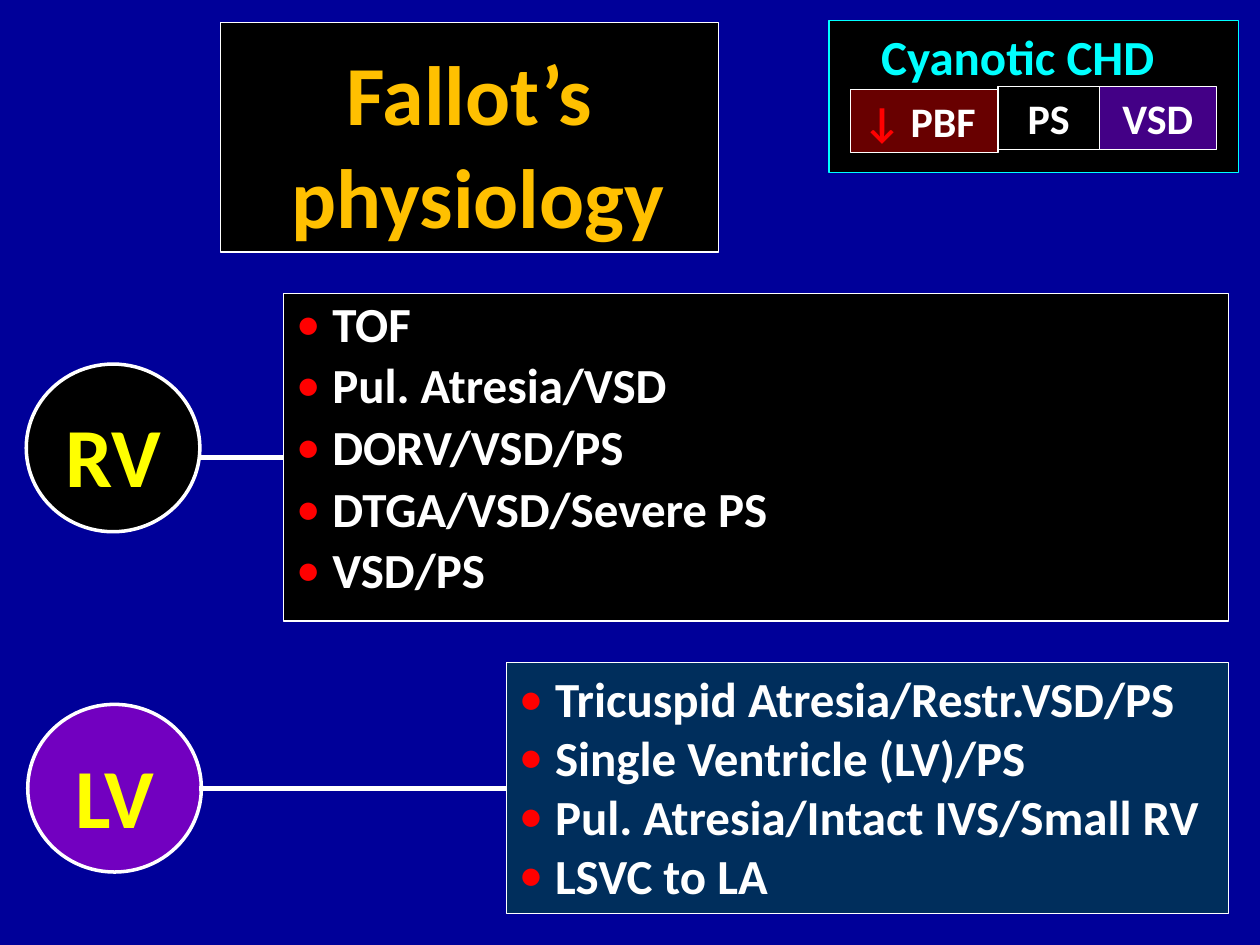
from dataclasses import dataclass

from lxml import etree
from pptx import Presentation
from pptx.dml.color import RGBColor
from pptx.enum.shapes import MSO_CONNECTOR, MSO_SHAPE
from pptx.enum.text import MSO_ANCHOR, MSO_AUTO_SIZE, PP_ALIGN
from pptx.oxml.ns import qn
from pptx.util import Cm, Pt

RECT, OVAL = MSO_SHAPE.RECTANGLE, MSO_SHAPE.OVAL
LINE = MSO_CONNECTOR.STRAIGHT
TOP, MID, LOW = MSO_ANCHOR.TOP, MSO_ANCHOR.MIDDLE, MSO_ANCHOR.BOTTOM
LEFT, CENTER = PP_ALIGN.LEFT, PP_ALIGN.CENTER
FIXED = MSO_AUTO_SIZE.NONE


@dataclass(frozen=True)
class Theme:
    font: str = "Calibri"
    back: str = "000099"
    black: str = "000000"
    white: str = "FFFFFF"
    gold: str = "FFC000"
    yellow: str = "FFFF00"
    cyan: str = "00FFFF"
    red: str = "FF0000"
    maroon: str = "680000"
    indigo: str = "430086"
    violet: str = "7200C0"
    navy: str = "002E5C"
    big: int = 48
    body: int = 28
    small: int = 24


T = Theme()


@dataclass(frozen=True)
class Box:
    x: float
    y: float
    w: float
    h: float
    fill: str
    edge: str = T.white
    width: float = 0.75


@dataclass(frozen=True)
class Branch:
    name: str
    disc: Box
    panel: Box
    link: float  # height of the joining line
    items: tuple[str, ...]
    space: float = 1.0
    gap: float = 0


@dataclass(frozen=True)
class Tag:
    box: Box
    runs: tuple[tuple[str, str], ...]
    align: PP_ALIGN = CENTER


BRANCHES = (
    Branch("RV", Box(0.53, 7.34, 3.5, 3.38, T.black, width=2),
           Box(5.72, 5.92, 19.05, 6.6, T.black), 9.22,
           ("TOF", "Pul. Atresia/VSD", "DORV/VSD/PS", "DTGA/VSD/Severe PS",
            "VSD/PS"), 0.9, 5),
    Branch("LV", Box(0.56, 14.2, 3.5, 3.38, T.violet, width=2),
           Box(10.21, 13.36, 14.56, 5.05, T.navy), 15.9,
           ("Tricuspid Atresia/Restr.VSD/PS", "Single Ventricle (LV)/PS",
            "Pul. Atresia/Intact IVS/Small RV", "LSVC to LA")),
)
TAGS = (
    Tag(Box(17.15, 1.8, 2.97, 1.27, T.maroon),
        (("↓", T.red), (" PBF", T.white)), LEFT),
    Tag(Box(20.12, 1.75, 2.04, 1.27, T.black), (("PS", T.white),)),
    Tag(Box(22.16, 1.75, 2.36, 1.27, T.indigo), (("VSD", T.white),)),
)


def rgb(code: str) -> RGBColor:
    return RGBColor.from_string(code)


def paint(shape, box: Box, anchor=TOP) -> None:
    """Place a shape and give it fill, edge and text frame settings."""
    shape.left, shape.top = Cm(box.x), Cm(box.y)
    shape.width, shape.height = Cm(box.w), Cm(box.h)
    shape.fill.solid()
    shape.fill.fore_color.rgb = rgb(box.fill)
    shape.line.color.rgb = rgb(box.edge)
    shape.line.width = Pt(box.width)
    frame = shape.text_frame
    frame.auto_size = FIXED
    frame.word_wrap = True
    frame.vertical_anchor = anchor


def draw(slide, box: Box, kind=RECT, anchor=TOP):
    shape = slide.shapes.add_shape(kind, 0, 0, Cm(box.w), Cm(box.h))
    shape.shadow.inherit = False
    paint(shape, box, anchor)
    return shape.text_frame


def write(para, text: str, size: int, color: str, align=CENTER) -> None:
    para.alignment = align
    run = para.add_run()
    run.text = text
    font = run.font
    font.name, font.size, font.bold = T.font, Pt(size), True
    font.color.rgb = rgb(color)


def bullet(para) -> None:
    props = para._p.get_or_add_pPr()
    props.set("marL", str(Cm(0.73)))
    props.set("indent", str(-Cm(0.73)))
    tint = etree.SubElement(props, qn("a:buClr"))
    etree.SubElement(tint, qn("a:srgbClr"), val=T.red)
    etree.SubElement(props, qn("a:buFont"), typeface=T.font)
    etree.SubElement(props, qn("a:buChar"), char="•")


def join(slide, start: float, end: float, y: float) -> None:
    line = slide.shapes.add_connector(LINE, Cm(start), Cm(y), Cm(end), Cm(y))
    line.line.color.rgb = rgb(T.white)
    line.line.width = Pt(3)
    etree.SubElement(line._element.spPr, qn("a:effectLst"))


def branch(slide, part: Branch) -> None:
    disc = draw(slide, part.disc, OVAL, MID)
    disc.word_wrap = False
    disc.margin_top = Cm(0.38)
    write(disc.paragraphs[0], part.name, T.big, T.yellow)
    panel = draw(slide, part.panel)
    for i, item in enumerate(part.items):
        para = panel.add_paragraph() if i else panel.paragraphs[0]
        bullet(para)
        para.line_spacing = part.space
        para.space_before = Pt(part.gap if i else 0)
        write(para, item, T.body, T.white, LEFT)
    join(slide, 4.01, part.panel.x, part.link)


def main() -> None:
    deck = Presentation()
    deck.slide_width, deck.slide_height = Cm(25.4), Cm(19.05)
    slide = deck.slides.add_slide(deck.slide_layouts[5])
    slide.background.fill.solid()
    slide.background.fill.fore_color.rgb = rgb(T.back)

    # Title
    title = slide.shapes.title
    paint(title, Box(4.45, 0.46, 10.03, 4.62, T.black), LOW)
    frame = title.text_frame
    write(frame.paragraphs[0], "Fallot’s", T.big, T.gold)
    para = frame.add_paragraph()
    para.space_before = Pt(1.5)
    para._p.get_or_add_pPr().set("marL", str(Cm(0.35)))
    write(para, "physiology", T.big, T.gold)

    # Ventricles with their lesions
    for part in BRANCHES:
        branch(slide, part)

    # Summary card with tags
    card = draw(slide, Box(16.71, 0.41, 8.26, 3.07, T.black, T.cyan))
    card.margin_right = Cm(0.9)
    write(card.paragraphs[0], "Cyanotic CHD", T.body, T.cyan)
    for tag in TAGS:
        frame = draw(slide, tag.box)
        for text, color in tag.runs:
            write(frame.paragraphs[0], text, T.small, color, tag.align)

    deck.save("out.pptx")


if __name__ == "__main__":
    main()
